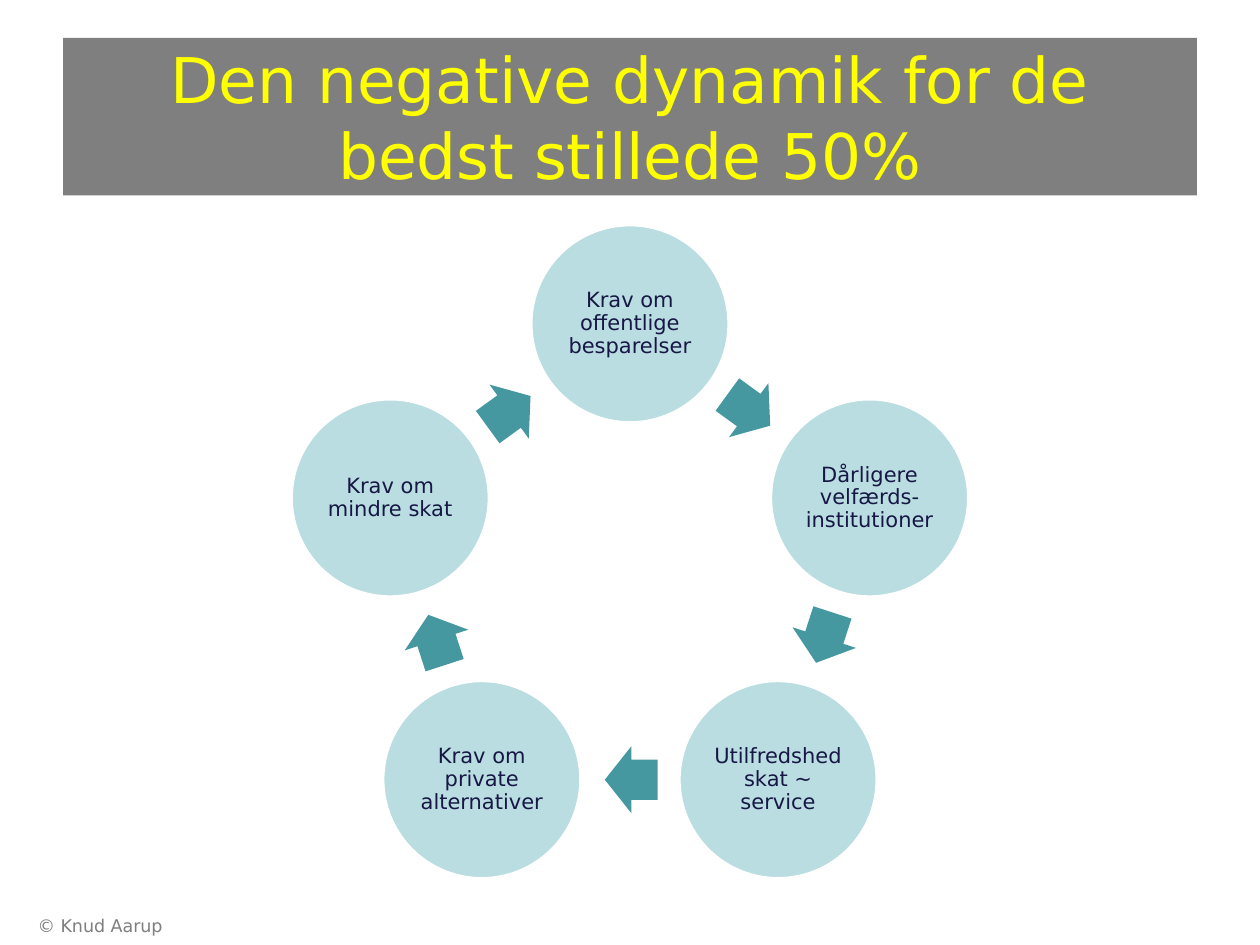
from math import cos, pi, sin

from pptx import Presentation
from pptx.dml.color import RGBColor
from pptx.enum.shapes import MSO_SHAPE
from pptx.enum.text import MSO_ANCHOR, PP_ALIGN
from pptx.util import Inches, Pt

OVAL, RIGHT_ARROW = MSO_SHAPE.OVAL, MSO_SHAPE.RIGHT_ARROW
MIDDLE, CENTER, LEFT = MSO_ANCHOR.MIDDLE, PP_ALIGN.CENTER, PP_ALIGN.LEFT

FONT = "DejaVu Sans"
GRAY = RGBColor(0x7F, 0x7F, 0x7F)
YELLOW = RGBColor(0xFF, 0xFF, 0x00)
WHITE = RGBColor(0xFF, 0xFF, 0xFF)
PALE_TEAL = RGBColor(0xBA, 0xDD, 0xE1)
TEAL = RGBColor(0x45, 0x97, 0xA0)
NAVY = RGBColor(0x17, 0x17, 0x45)

CENTER_X, CENTER_Y, RADIUS = 5, 4.57, 2
DIAMETER = 1.56
ARROW_LENGTH, ARROW_HEIGHT = 0.42, 0.53
ARROW_SETBACK = 0.01

STEPS = [
    "Krav om offentlige besparelser",
    "Dårligere velfærds-institutioner",
    "Utilfredshed skat ~ service",
    "Krav om private alternativer",
    "Krav om mindre skat",
]


class CycleSlide:
    def __init__(self, deck):
        self.slide = deck.slides.add_slide(deck.slide_layouts[5])

    def set_text(self, shape, text, size, color, align=CENTER):
        frame = shape.text_frame
        frame.word_wrap = True
        frame.text = text
        para = frame.paragraphs[0]
        para.alignment = align
        font = para.runs[0].font
        font.name, font.size = FONT, Pt(size)
        font.color.rgb = color
        return frame

    def title(self, text):
        title = self.slide.shapes.title
        title.left, title.top = Inches(0.5), Inches(0.3)
        title.width, title.height = Inches(9), Inches(1.25)
        title.fill.solid()
        title.fill.fore_color.rgb = GRAY
        self.set_text(title, text, 36, YELLOW).vertical_anchor = MIDDLE

    def footer(self, text):
        box = self.slide.shapes.add_textbox(
            Inches(0.2), Inches(7.21), Inches(2.33), Inches(0.29))
        self.set_text(box, text, 10, GRAY, LEFT)

    def centered_shape(self, kind, x, y, width, height, fill):
        """Add a filled preset shape around the point (x, y)."""
        shape = self.slide.shapes.add_shape(
            kind, Inches(x - width / 2), Inches(y - height / 2),
            Inches(width), Inches(height))
        shape.shadow.inherit = False
        shape.fill.solid()
        shape.fill.fore_color.rgb = fill
        return shape

    def step(self, x, y, text):
        circle = self.centered_shape(OVAL, x, y, DIAMETER, DIAMETER, PALE_TEAL)
        circle.line.color.rgb = WHITE
        circle.line.width = Pt(1)
        frame = self.set_text(circle, text, 12, NAVY)
        frame.vertical_anchor = MIDDLE
        frame.margin_left = frame.margin_right = Inches(0.02)
        frame.margin_top = frame.margin_bottom = Inches(0.02)
        frame.paragraphs[0].line_spacing = 0.9

    def arrow(self, x, y, rotation):
        arrow = self.centered_shape(
            RIGHT_ARROW, x, y, ARROW_LENGTH, ARROW_HEIGHT, TEAL)
        arrow.line.fill.background()
        arrow.adjustments[0], arrow.adjustments[1] = 0.6, 0.5
        arrow.rotation = rotation

    def cycle(self, steps):
        """Place the steps clockwise from the top, with an arrow after each."""
        turn = 2 * pi / len(steps)
        middle_radius = RADIUS * cos(turn / 2)
        for index, text in enumerate(steps):
            angle = index * turn
            self.step(CENTER_X + RADIUS * sin(angle),
                      CENTER_Y - RADIUS * cos(angle), text)
            middle = angle + turn / 2
            self.arrow(
                CENTER_X + middle_radius * sin(middle) - ARROW_SETBACK * cos(middle),
                CENTER_Y - middle_radius * cos(middle) - ARROW_SETBACK * sin(middle),
                (index + 0.5) * 360 / len(steps))


def main():
    deck = Presentation()
    deck.slide_width, deck.slide_height = Inches(10), Inches(7.5)
    page = CycleSlide(deck)
    page.title("Den negative dynamik for de bedst stillede 50%")
    page.footer("© Knud Aarup")
    page.cycle(STEPS)
    deck.save("out.pptx")


if __name__ == "__main__":
    main()
